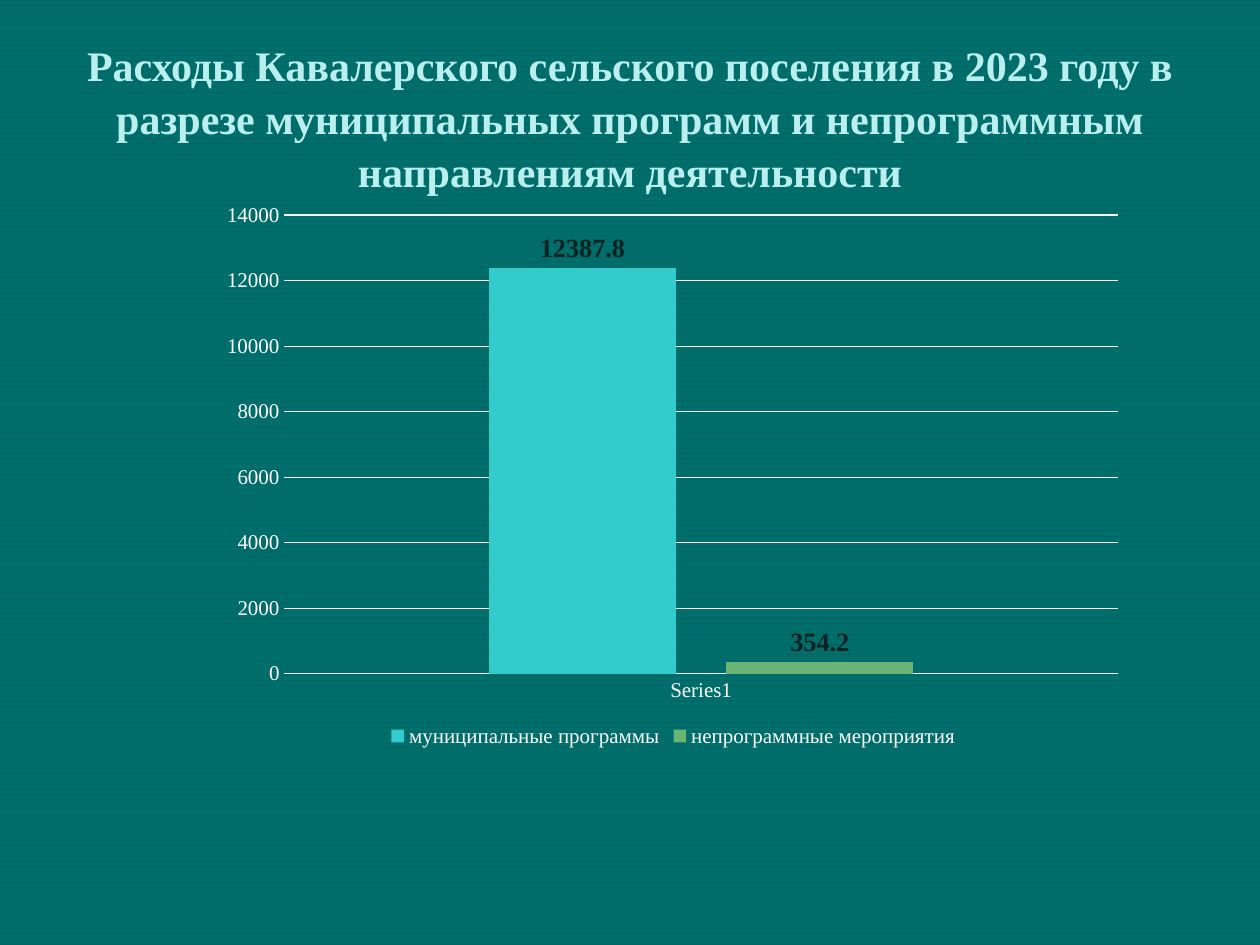
from lxml.etree import SubElement
from pptx import Presentation
from pptx.chart.data import CategoryChartData
from pptx.dml.color import RGBColor
from pptx.enum.chart import XL_CHART_TYPE as ChartType
from pptx.enum.chart import XL_LABEL_POSITION as LabelPosition
from pptx.enum.chart import XL_LEGEND_POSITION as LegendPosition
from pptx.enum.chart import XL_TICK_MARK as TickMark
from pptx.enum.dml import MSO_PATTERN as Pattern
from pptx.enum.text import MSO_ANCHOR as Anchor
from pptx.enum.text import PP_ALIGN as Align
from pptx.oxml.ns import qn
from pptx.util import Pt

FONT = "Times New Roman"
COLORS = {
    "stripe": "006E6B",
    "ground": "006666",
    "title": "B9EFEE",
    "text": "FFFFFF",
    "label": "082322",
    "programs": "33CCCC",
    "other": "6AB475",
}
TITLE = (
    "Расходы Кавалерского сельского поселения в 2023 году в разрезе "
    "муниципальных программ и непрограммным направлениям деятельности"
)
SERIES = [
    ("муниципальные программы", 12387.8, "programs", 15),
    ("непрограммные мероприятия", 354.2, "other", 15.1),
]
PLOT_LAYOUT = {"x": 0.08, "y": 0.04, "w": 0.9, "h": 0.82}


def color(name):
    return RGBColor.from_string(COLORS[name])


def style_font(font, size, name, bold=False):
    font.name = FONT
    font.size = Pt(size)
    font.bold = bold
    font.color.rgb = color(name)


def style_line(line):
    line.color.rgb = color("text")
    line.width = Pt(0.75)


def paint_background(page):
    fill = page.background.fill
    fill.patterned()
    fill.pattern = Pattern.DARK_HORIZONTAL
    fill.fore_color.rgb = color("stripe")
    fill.back_color.rgb = color("ground")


def add_title(page):
    box = page.shapes.add_textbox(Pt(36), Pt(21.6), Pt(648), Pt(90))
    frame = box.text_frame
    frame.word_wrap = True
    frame.vertical_anchor = Anchor.MIDDLE
    para = frame.paragraphs[0]
    para.alignment = Align.CENTER
    para.line_spacing = 1.05
    span = para.add_run()
    span.text = TITLE
    style_font(span.font, 24, "title", bold=True)


def place_plot(chart):
    area = chart.element.find(".//" + qn("c:plotArea"))
    layout = area.find(qn("c:layout"))
    if layout is None:
        layout = SubElement(area, qn("c:layout"))
        area.insert(0, layout)
    manual = SubElement(layout, qn("c:manualLayout"))
    settings = {"layoutTarget": "inner", "xMode": "edge", "yMode": "edge", **PLOT_LAYOUT}
    for tag, value in settings.items():
        SubElement(manual, qn("c:" + tag)).set("val", str(value))


def style_axes(chart):
    for axis in (chart.category_axis, chart.value_axis):
        axis.major_tick_mark = TickMark.NONE
        axis.minor_tick_mark = TickMark.NONE
        style_font(axis.tick_labels.font, 12, "text")
    style_line(chart.category_axis.format.line)
    values = chart.value_axis
    values.minimum_scale, values.maximum_scale, values.major_unit = 0, 14000, 2000
    values.format.line.fill.background()
    values.has_major_gridlines = True
    style_line(values.major_gridlines.format.line)


def style_series(series, fill_name, label_size):
    series.format.fill.solid()
    series.format.fill.fore_color.rgb = color(fill_name)
    labels = series.data_labels
    labels.show_value = True
    labels.position = LabelPosition.OUTSIDE_END
    style_font(labels.font, label_size, "label", bold=True)


def add_expense_chart(page):
    data = CategoryChartData()
    data.categories = ["Series1"]
    for name, value, _, _ in SERIES:
        data.add_series(name, [value])
    chart = page.shapes.add_chart(
        ChartType.COLUMN_CLUSTERED, Pt(120.24), Pt(110.16), Pt(529.2), Pt(319.68), data
    ).chart
    chart.has_title = False
    style_font(chart.font, 10, "text")
    chart.has_legend = True
    chart.legend.position = LegendPosition.BOTTOM
    chart.legend.include_in_layout = False
    style_font(chart.legend.font, 12, "text")
    plot = chart.plots[0]
    plot.gap_width = 219
    plot.overlap = -27
    plot.vary_by_categories = False
    for series, (_, _, fill_name, label_size) in zip(plot.series, SERIES):
        style_series(series, fill_name, label_size)
    style_axes(chart)
    place_plot(chart)


def main():
    deck = Presentation()
    deck.slide_width, deck.slide_height = Pt(720), Pt(540)
    page = deck.slides.add_slide(deck.slide_layouts[6])
    paint_background(page)
    add_title(page)
    add_expense_chart(page)
    deck.save("out.pptx")


if __name__ == "__main__":
    main()
